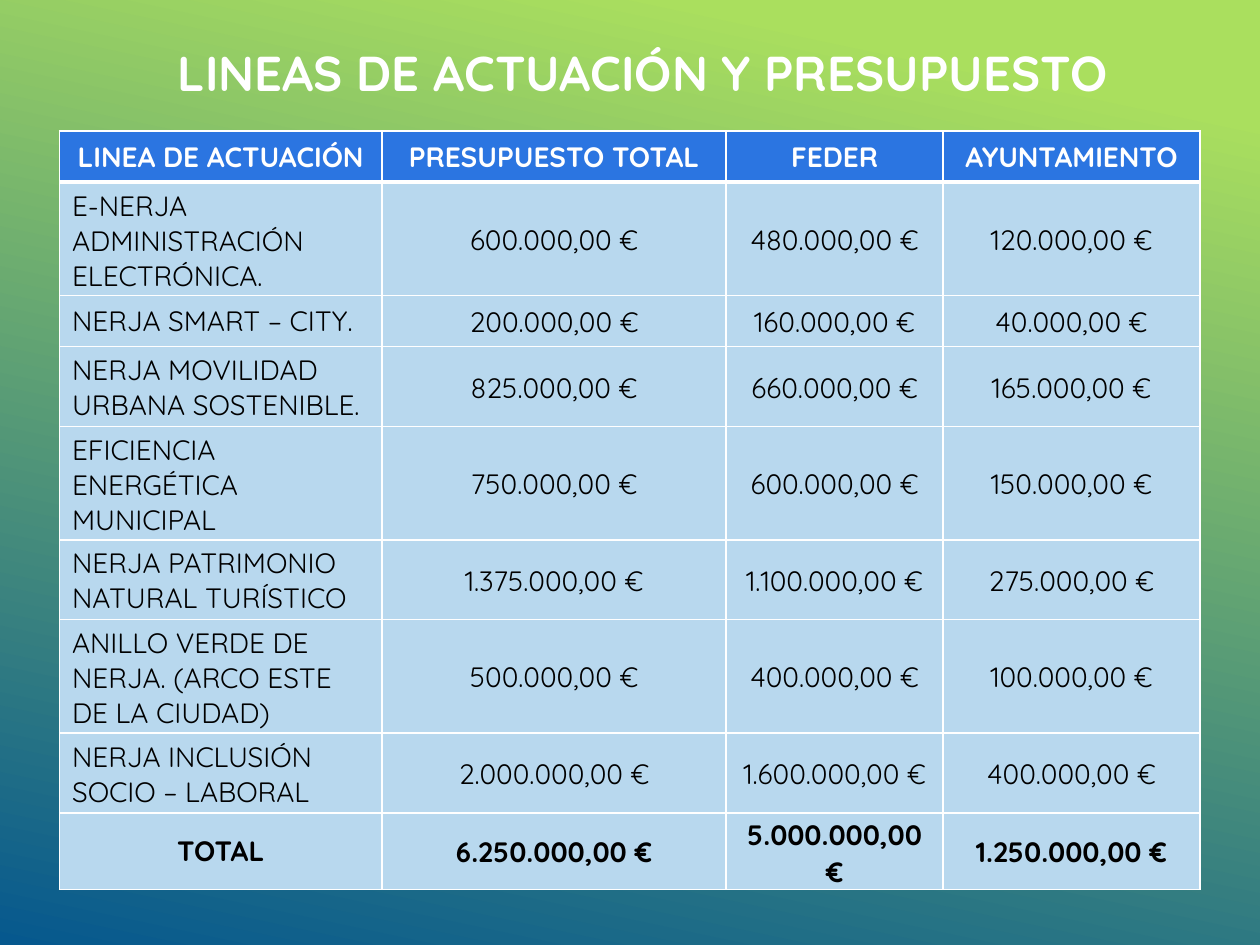
from lxml.etree import SubElement
from pptx import Presentation
from pptx.dml.color import RGBColor
from pptx.enum.text import MSO_ANCHOR, MSO_AUTO_SIZE, PP_ALIGN
from pptx.oxml.ns import qn
from pptx.util import Cm, Pt

THEME = {
    "font": "Quicksand",
    "title_size": 28,
    "table_size": 16,
    "white": "FFFFFF",
    "black": "000000",
    "header": "2B75E1",
    "body": "B8D8EE",
    "gradient": [(0.1, "AADF5E"), (1, "06588E")],
}

HEADINGS = ["LINEA DE ACTUACIÓN", "PRESUPUESTO TOTAL", "FEDER", "AYUNTAMIENTO"]
BUDGET = [
    ("E-NERJA ADMINISTRACIÓN ELECTRÓNICA.", "600.000,00 €", "480.000,00 €", "120.000,00 €"),
    ("NERJA SMART – CITY.", "200.000,00 €", "160.000,00 €", "40.000,00 €"),
    ("NERJA MOVILIDAD URBANA SOSTENIBLE.", "825.000,00 €", "660.000,00 €", "165.000,00 €"),
    ("EFICIENCIA ENERGÉTICA MUNICIPAL", "750.000,00 €", "600.000,00 €", "150.000,00 €"),
    ("NERJA PATRIMONIO NATURAL TURÍSTICO", "1.375.000,00 €", "1.100.000,00 €", "275.000,00 €"),
    ("ANILLO VERDE DE NERJA. (ARCO ESTE DE LA CIUDAD)",
     "500.000,00 €", "400.000,00 €", "100.000,00 €"),
    ("NERJA INCLUSIÓN SOCIO – LABORAL", "2.000.000,00 €", "1.600.000,00 €", "400.000,00 €"),
    ("TOTAL", "6.250.000,00 €", "5.000.000,00 €", "1.250.000,00 €"),
]


def write(frame, text, size=THEME["table_size"], color=THEME["black"], bold=False,
          align=PP_ALIGN.CENTER, line_spacing=None, space_after=None):
    para = frame.paragraphs[0]
    para.alignment = align
    if line_spacing:
        para.line_spacing = line_spacing
    if space_after is not None:
        para.space_after = Pt(space_after)
    span = para.add_run()
    span.text = text
    span.font.name = THEME["font"]
    span.font.size = Pt(size)
    span.font.bold = bold
    span.font.color.rgb = RGBColor.from_string(color)


def paint_cell(cell, color, bottom_width):
    # Borders come before the fill in the cell properties
    properties = cell._tc.get_or_add_tcPr()
    for side, width in (("L", 1), ("R", 1), ("T", 1), ("B", bottom_width)):
        line = SubElement(properties, qn(f"a:ln{side}"), w=str(Pt(width)))
        fill = SubElement(line, qn("a:solidFill"))
        SubElement(fill, qn("a:srgbClr"), val=THEME["white"])
    cell.fill.solid()
    cell.fill.fore_color.rgb = RGBColor.from_string(color)


deck = Presentation()
deck.slide_width, deck.slide_height = Cm(25.4), Cm(19.05)
page = deck.slides.add_slide(deck.slide_layouts[5])

# Background gradient
background = page.background.fill
background.gradient()
background.gradient_angle = 258
for stop, (position, color) in zip(background.gradient_stops, THEME["gradient"]):
    stop.position = position
    stop.color.rgb = RGBColor.from_string(color)

# Title
title = page.shapes.title
title.left, title.top, title.width, title.height = Cm(1.2), Cm(0.72), Cm(23.5), Cm(1.45)
title.text_frame.word_wrap = True
title.text_frame.auto_size = MSO_AUTO_SIZE.SHAPE_TO_FIT_TEXT
title.text_frame.vertical_anchor = MSO_ANCHOR.TOP
write(title.text_frame, "LINEAS DE ACTUACIÓN Y PRESUPUESTO",
      size=THEME["title_size"], color=THEME["white"], bold=True)

# Budget table: rows grow to fit their text
rows = [HEADINGS, *BUDGET]
box = page.shapes.add_table(len(rows), len(HEADINGS), Cm(1.2), Cm(2.64), Cm(23), Cm(14.78))
table = box.table
for column, width in zip(table.columns, (6.5, 6.94, 4.37, 5.18)):
    column.width = Cm(width)
for row in table.rows:
    row.height = Cm(1.03)
box.height = Cm(14.78)

for row_index, values in enumerate(rows):
    is_header = row_index == 0
    is_total = row_index == len(rows) - 1
    for column_index, text in enumerate(values):
        cell = table.cell(row_index, column_index)
        cell.vertical_anchor = MSO_ANCHOR.MIDDLE
        paint_cell(cell, THEME["header" if is_header else "body"], 3 if is_header else 1)
        if is_header:
            write(cell.text_frame, text, color=THEME["white"], bold=True)
        elif column_index == 0:
            write(cell.text_frame, text, bold=is_total,
                  align=PP_ALIGN.CENTER if is_total else PP_ALIGN.LEFT)
        else:
            cell.margin_left = cell.margin_right = Cm(0.18)
            cell.margin_top = cell.margin_bottom = Cm(0.05)
            write(cell.text_frame, text, bold=is_total, line_spacing=1.07, space_after=8)

deck.save("out.pptx")
